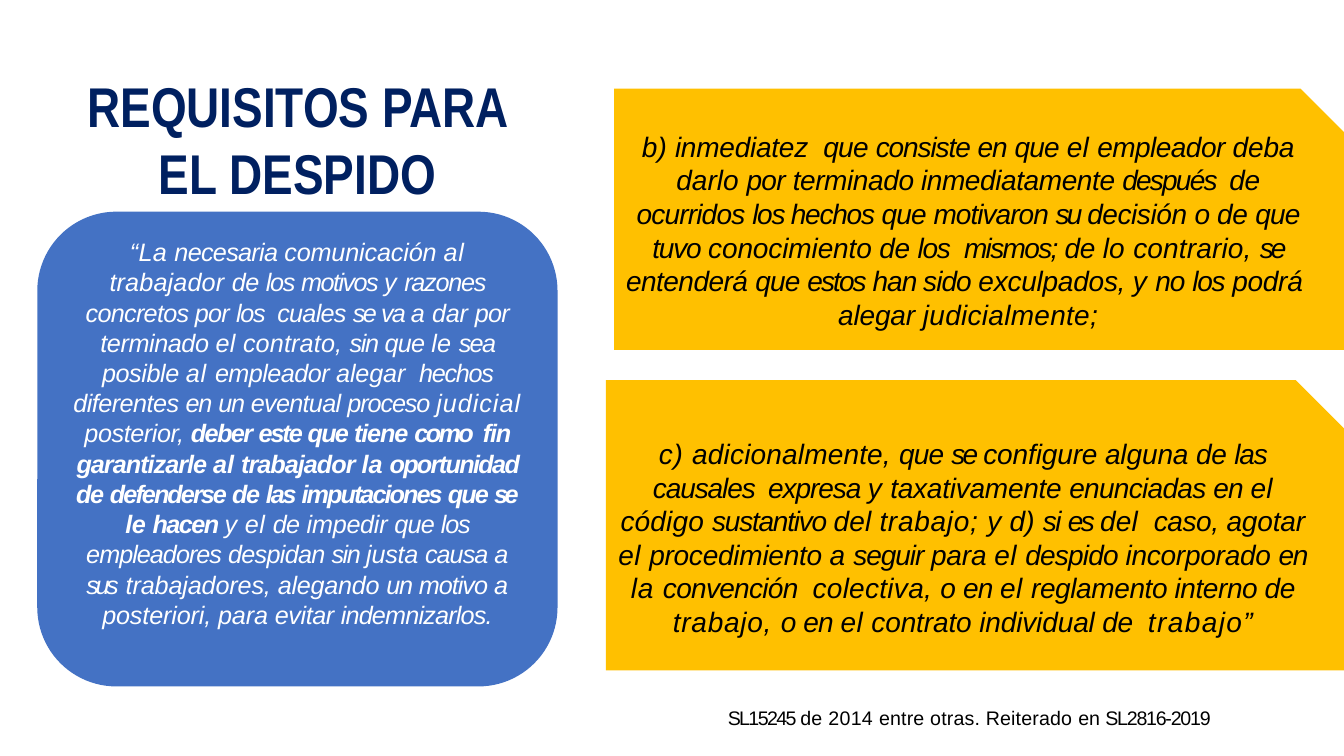
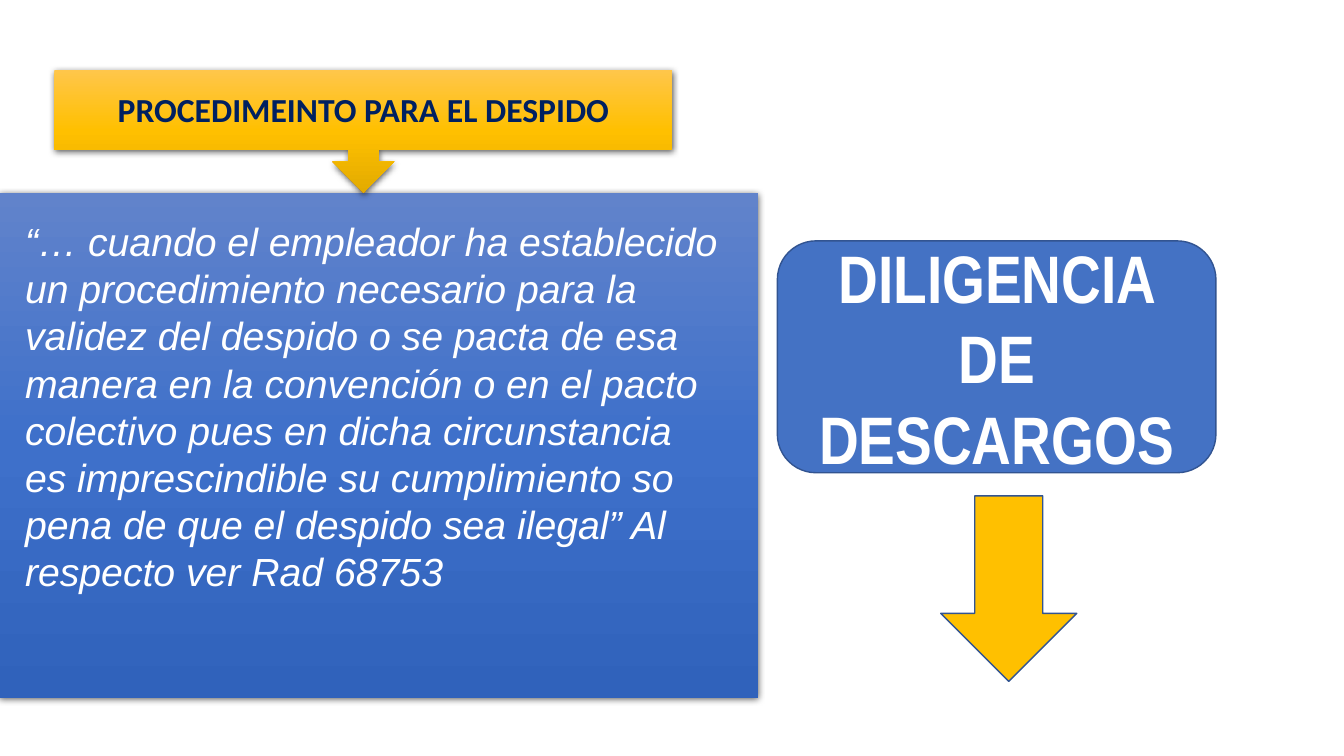
from pptx import Presentation
from pptx.dml.color import RGBColor
from pptx.enum.shapes import MSO_SHAPE as Kind
from pptx.enum.text import MSO_ANCHOR, PP_ALIGN
from pptx.oxml.ns import qn
from pptx.util import Inches, Pt
from lxml.etree import SubElement

HUES = {
    "white": "FFFFFF", "black": "000000", "navy": "002060",
    "blue": "4472C4", "gold": "FFC000", "edge": "325491",
}
FADES = {
    "blue": ("6183CB", "3E70CA", "3062BB"),
    "gold": ("FFC64B", "FFC000", "E3AB00"),
}
LOOKS = {
    "title": ("Arial Narrow", 40, "navy", True, False),
    "badge": ("Arial Narrow", 48, "white", True, False),
    "head": ("Calibri", 24, "navy", True, False),
    "motive": ("Arial", 18, "white", False, True),
    "strong": ("Arial", 18, "white", True, True),
    "rule": ("Arial", 20, "black", False, True),
    "quote": ("Arial", 28, "white", False, True),
    "cite": ("Arial", 14, "black", False, False),
}

MOTIVE = [
    ("“La ", 0.2), ("necesaria ", -0.5), ("comunicación ", -0.1), ("al ", 0.6),
    ("trabajador ", 0.1), ("de ", -0.4), ("los ", -0.9), ("motivos ", -1.1),
    ("y ", 0.2), ("razones ", -0.9), ("concretos por ", -0.5), ("los  ", -0.9),
    ("cuales ", -0.5), ("se ", -1.9), ("va ", -1.4), ("a ", 0.1),
    ("dar ", -0.2), ("por ", -0.5), ("terminado ", -0.3), ("el ", 0.2),
    ("contrato, ", 0.1), ("sin ", -1), ("que ", -0.6), ("le ", 0.2),
    ("sea ", -1.2), ("posible ", -0.3), ("al ", 0.6), ("empleador ", -0.4),
    ("alegar  ", -0.1), ("hechos ", -0.9), ("diferentes ", -0.4), ("en ", -0.8),
    ("un ", -0.9), ("eventual ", -0.5), ("proceso ", -0.8), ("judicial ", 0.7),
    ("posterior, ", -0.3),
]
DUTY = [
    ("deber ", -1.1), ("este ", -1.5), ("que ", -1.3), ("tiene ", -0.8),
    ("como  ", -1.8), ("fin ", -0.8), ("garantizarle ", -0.7), ("al ", 0),
    ("trabajador ", -0.7), ("la ", 0), ("oportunidad ", -1.2), ("de ", -0.9),
    ("defenderse ", -1.4), ("de ", -0.9), ("las ", -1.5),
    ("imputaciones ", -1.4), ("que ", -1.3), ("se  ", -2.5), ("le ", -0.3),
    ("hacen ", -1.1),
]
CAUSE = [
    ("y ", 0.2), ("el ", 0.3), ("de ", -0.4), ("impedir ", -0.2),
    ("que ", -0.6), ("los ", -0.9), ("empleadores ", -0.7), ("despidan ", -0.5),
    ("sin ", -1.1), ("justa ", -0.2), ("causa ", -0.7), ("a ", 0.1),
    ("sus  ", -2.5), ("trabajadores, ", -0.1), ("alegando ", -0.2),
    ("un ", -0.9), ("motivo ", -0.7), ("a ", 0.1), ("posteriori, para ", -0.1),
    ("evitar ", -0.3), ("indemnizarlos.", -0.6),
]
PROMPT = [
    ("b) ", 0.1), ("inmediatez  ", -0.2), ("que ", -0.5), ("consiste ", -0.8),
    ("en ", -0.7), ("que ", -0.6), ("el ", 0.2), ("empleador ", -0.4),
    ("deba ", -0.1), ("darlo ", 0), ("por ", -0.5),
    ("terminado inmediatamente ", -0.3), ("después  ", -1.3), ("de ", -0.3),
    ("ocurridos ", -0.6), ("los hechos ", -0.9), ("que ", -0.6),
    ("motivaron ", -0.7), ("su ", -2.1), ("decisión ", -0.3), ("o ", -0.5),
    ("de ", -0.3), ("que ", -0.6), ("tuvo ", -0.9), ("conocimiento ", -0.1),
    ("de ", -0.3), ("los  ", -0.9), ("mismos; ", -1.2), ("de ", -0.3),
    ("lo ", 0.2), ("contrario, ", 0.1), ("se ", -2), ("entenderá ", -0.4),
    ("que ", -0.6), ("estos ", -1.4), ("han sido ", -0.7),
    ("exculpados, ", -0.2), ("y ", 0.2), ("no ", -0.7), ("los ", -0.9),
    ("podrá  ", -0.2), ("alegar ", -0.1), ("judicialmente;", 0.2),
]
GROUNDS = [
    ("c) ", 0.5), ("adicionalmente, ", 0.1), ("que ", -0.6), ("se ", -1.9),
    ("configure alguna ", -0.1), ("de ", -0.3), ("las causales  expresa ", -0.8),
    ("y ", 0.2), ("taxativamente ", -0.2), ("enunciadas ", -0.5), ("en ", -0.7),
    ("el ", 0.2), ("código ", 0.1), ("sustantivo ", -0.9), ("del ", 0.1),
    ("trabajo; ", 0.5), ("y ", 0.2), ("d) ", 0.1), ("si ", -1.1), ("es ", -1.9),
    ("del  ", 0.1), ("caso, ", -0.3), ("agotar ", -0.1), ("el ", 0.3),
    ("procedimiento ", -0.2), ("a ", 0.1), ("seguir ", -0.8), ("para ", -0.1),
    ("el ", 0.3), ("despido ", -0.6), ("incorporado ", -0.2), ("en ", -0.8),
    ("la ", 0.6), ("convención  ", -0.5), ("colectiva, ", 0.2), ("o ", -0.5),
    ("en ", -0.7), ("el ", 0.3), ("reglamento interno de ", -0.3),
    ("trabajo, ", 0.5), ("o ", -0.5), ("en ", -0.7), ("el ", 0.3),
    ("contrato individual ", -0.1), ("de  ", -0.3), ("trabajo”", 1),
]
CITE = [
    ("SL15245 ", -1.2), ("de 2014 ", 0.2), ("entre otras. Reiterado ", 0.1),
    ("en ", -0.1), ("SL2816-2019", -0.9),
]
QUOTE = (
    "“… cuando el empleador ha establecido un procedimiento necesario para la "
    "validez del despido o se pacta de esa manera en la convención o en el "
    "pacto colectivo pues en dicha circunstancia es imprescindible su "
    "cumplimiento so pena de que el despido sea ilegal” Al respecto ver Rad 68753"
)


def color(name):
    return RGBColor.from_string(HUES[name])


def write(shape, parts, center=True):
    frame = shape.text_frame
    frame.word_wrap = True
    para = frame.paragraphs[0]
    para.alignment = PP_ALIGN.CENTER if center else PP_ALIGN.LEFT
    for look, runs in parts:
        face, size, hue, bold, slant = LOOKS[look]
        for text, gap in runs:
            run = para.add_run()
            run.text = text
            font = run.font
            font.name, font.size = face, Pt(size)
            font.bold, font.italic = bold, slant
            font.color.rgb = color(hue)
            if gap:
                font._element.set("spc", str(round(gap * 100)))


def label(slide, box, parts, center=False):
    area = slide.shapes.add_textbox(*map(Inches, box))
    write(area, parts, center)


def panel(slide, kind, box, parts=(), fill=None, edge=None):
    shape = slide.shapes.add_shape(kind, *map(Inches, box))
    shape.shadow.inherit = False
    if fill:
        shape.fill.solid()
        shape.fill.fore_color.rgb = color(fill)
    if edge:
        shape.line.color.rgb = color(edge)
        shape.line.width = Pt(1)
    else:
        shape.line.fill.background()
    shape.text_frame.vertical_anchor = MSO_ANCHOR.MIDDLE
    if parts:
        write(shape, parts)
    return shape


def fade(shape, name):
    shape.fill.gradient()
    shape.fill.gradient_angle = 270
    props = shape._element.spPr
    stops = props.find(".//" + qn("a:gsLst"))
    for stop in list(stops):
        stops.remove(stop)
    for step, tint in enumerate(FADES[name]):
        stop = SubElement(stops, qn("a:gs"), pos=str(step * 50000))
        SubElement(stop, qn("a:srgbClr"), val=tint)
    shade = SubElement(
        props.find(qn("a:effectLst")), qn("a:outerShdw"),
        blurRad=str(Pt(4.5)), dist=str(Pt(1.5)), dir="5400000",
        algn="ctr", rotWithShape="0",
    )
    tone = SubElement(shade, qn("a:srgbClr"), val=HUES["black"])
    SubElement(tone, qn("a:alpha"), val="63000")


def needs(slide):
    motive = panel(
        slide, Kind.ROUNDED_RECTANGLE, (0.37, 2.1, 5.16, 4.71),
        [("motive", MOTIVE), ("strong", DUTY), ("motive", CAUSE)], "blue",
    )
    motive.text_frame.margin_bottom = Inches(0.37)
    for box, runs in (
        ((6.09, 0.88, 7.24, 2.59), PROMPT),
        ((6.01, 3.77, 7.32, 2.88), GROUNDS),
    ):
        panel(slide, Kind.SNIP_1_RECTANGLE, box, [("rule", runs)], "gold")
    title = [("REQUISITOS PARA EL DESPIDO", 0)]
    label(slide, (0.51, 0.66, 4.88, 1.45), [("title", title)], True)
    label(slide, (7.12, 6.95, 5.04, 0.34), [("cite", CITE)])


def process(slide, box):
    left, top, width, height = box
    body = panel(
        slide, Kind.FLOWCHART_PROCESS, (left, top + 1.22, width, height - 1.22)
    )
    fade(body, "blue")
    label(
        slide, (left + 0.15, top + 1.42, width - 0.44, 4.34),
        [("quote", [(QUOTE, 0)])],
    )
    head = panel(
        slide, Kind.DOWN_ARROW_CALLOUT, (left + 0.54, top, 6.13, 1.22),
        [("head", [("PROCEDIMEINTO PARA EL DESPIDO", 0)])],
    )
    fade(head, "gold")


def hearing(slide, box):
    left, top, width, height = box
    panel(
        slide, Kind.FLOWCHART_ALTERNATE_PROCESS, (left, top, width, 2.3),
        [("badge", [("DILIGENCIA DE DESCARGOS", 0)])], "blue", "edge",
    )
    panel(
        slide, Kind.DOWN_ARROW, (left + 1.62, top + 2.53, 1.35, height - 2.53),
        fill="gold", edge="edge",
    )


def main():
    deck = Presentation()
    deck.slide_width, deck.slide_height = Inches(13.33), Inches(7.5)
    blank = deck.slide_layouts[6]
    needs(deck.slides.add_slide(blank))
    steps = deck.slides.add_slide(blank)
    process(steps, (0, 0.69, 7.52, 6.23))
    hearing(steps, (7.71, 2.39, 4.35, 4.37))
    deck.save("out.pptx")


if __name__ == "__main__":
    main()
